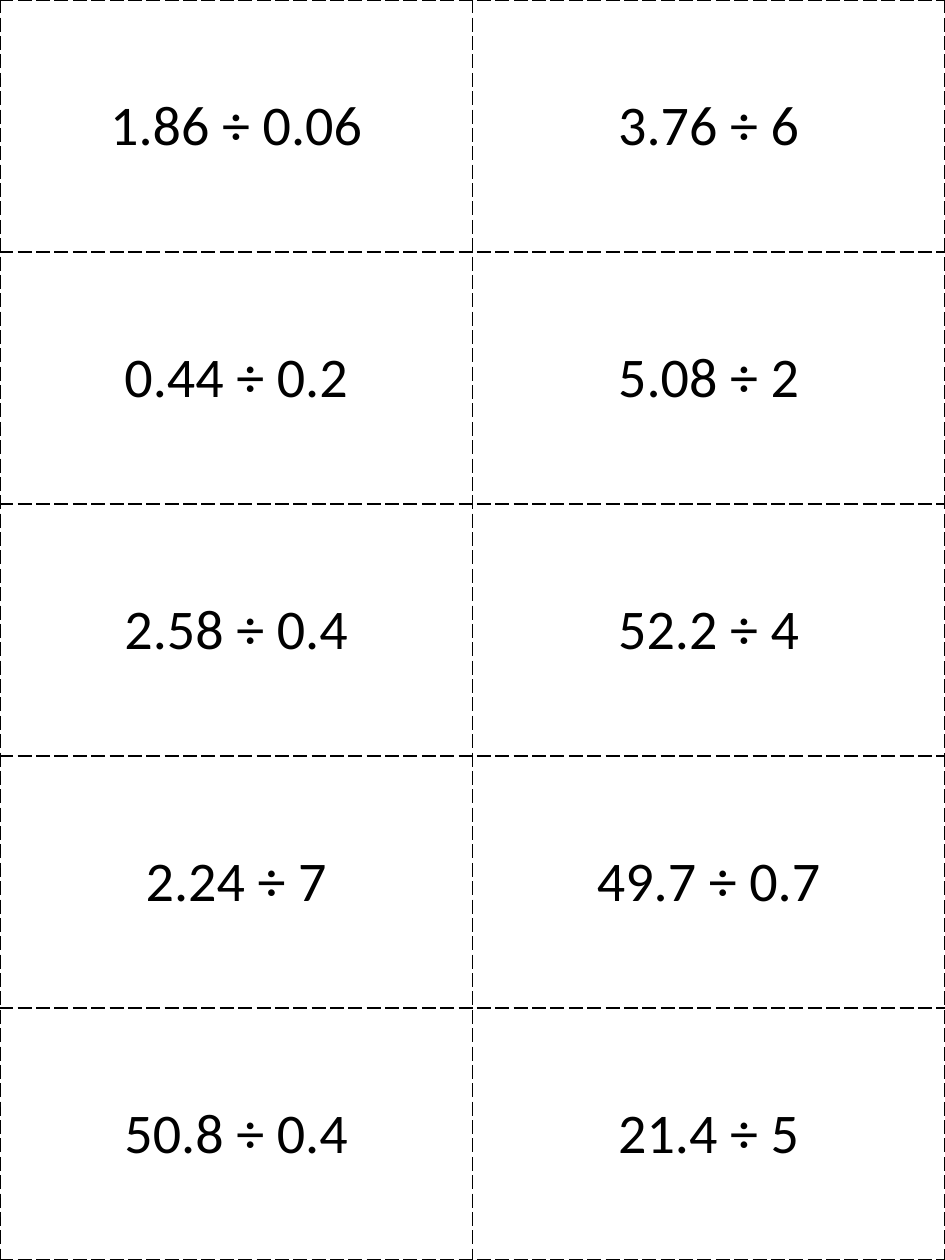
"""Build a sheet of dashed division cards, two across and five down."""
from lxml import etree
from pptx import Presentation
from pptx.dml.color import RGBColor
from pptx.enum.text import MSO_ANCHOR, PP_ALIGN
from pptx.oxml.ns import qn
from pptx.util import Pt

MIDDLE = MSO_ANCHOR.MIDDLE
CENTER = PP_ALIGN.CENTER
BLACK = RGBColor(0x00, 0x00, 0x00)
WIDTH, HEIGHT = 540, 720
BORDER_WIDTH = 1
CARD_FONT = {"name": "Calibri", "size": Pt(32), "bold": False}
PROBLEMS = [
    ("1.86 ÷ 0.06", "3.76 ÷ 6"),
    ("0.44 ÷ 0.2", "5.08 ÷ 2"),
    ("2.58 ÷ 0.4", "52.2 ÷ 4"),
    ("2.24 ÷ 7", "49.7 ÷ 0.7"),
    ("50.8 ÷ 0.4", "21.4 ÷ 5"),
]


def set_borders(cell):
    """Draw a dashed cutting line on all four sides of a cell."""
    tc_pr = cell._tc.get_or_add_tcPr()
    for side in ("lnL", "lnR", "lnT", "lnB"):
        ln = etree.SubElement(tc_pr, qn(f"a:{side}"), w=str(Pt(BORDER_WIDTH)))
        fill = etree.SubElement(ln, qn("a:solidFill"))
        etree.SubElement(fill, qn("a:srgbClr"), val=str(BLACK))
        etree.SubElement(ln, qn("a:prstDash"), val="lgDash")


def fill_card(cell, problem):
    """Write one centred problem into a cell."""
    set_borders(cell)
    cell.fill.background()
    cell.vertical_anchor = MIDDLE
    p = cell.text_frame.paragraphs[0]
    p.alignment = CENTER
    r = p.add_run()
    r.text = problem
    for name, value in CARD_FONT.items():
        setattr(r.font, name, value)
    r.font.color.rgb = BLACK


def add_cards(s, problems):
    """Add the table of cards over the whole slide."""
    table = s.shapes.add_table(len(problems), len(problems[0]),
                               Pt(0), Pt(0), Pt(WIDTH), Pt(HEIGHT)).table
    table.first_row = False
    table.horz_banding = False
    for i, row in enumerate(problems):
        for j, problem in enumerate(row):
            fill_card(table.cell(i, j), problem)


def main():
    """Create the slide and save it."""
    prs = Presentation()
    prs.slide_width, prs.slide_height = Pt(WIDTH), Pt(HEIGHT)
    s = prs.slides.add_slide(prs.slide_layouts[6])
    add_cards(s, PROBLEMS)
    prs.save("out.pptx")


if __name__ == "__main__":
    main()
